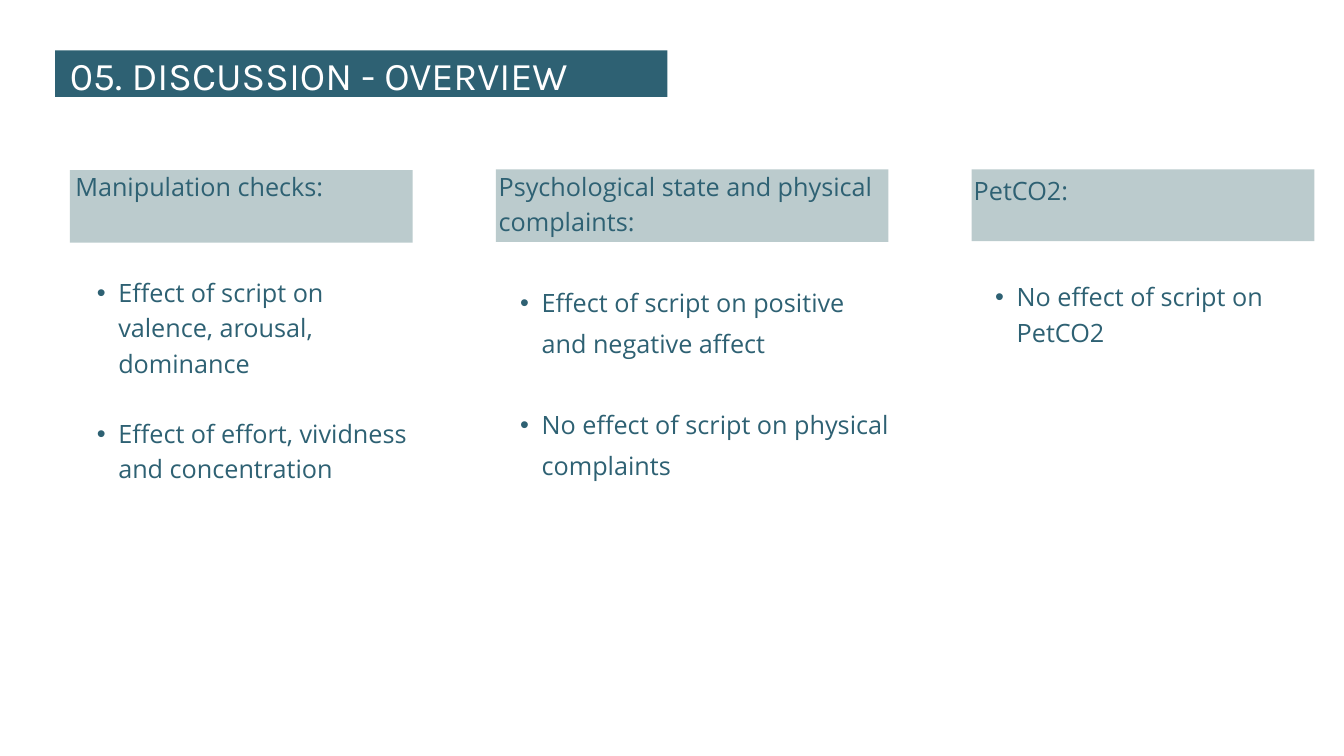
from lxml import etree
from pptx import Presentation
from pptx import util as u
from pptx.dml.color import RGBColor
from pptx.enum import shapes, text
from pptx.oxml.ns import qn

TEAL = RGBColor(0x2E, 0x61, 0x73)
MIST = RGBColor(0xBB, 0xCB, 0xCD)
WHITE = RGBColor(0xFF, 0xFF, 0xFF)


def add_text(p, content, font="Open Sans", size=27, color=TEAL,
             leading=37.8, before=0, bullet=False):
    """Write one formatted paragraph; leading and before are in points."""
    p.line_spacing = u.Pt(leading)
    p.space_before = u.Pt(before)
    r = p.add_run()
    r.text = content
    r.font.name = font
    r.font.size = u.Pt(size)
    r.font.color.rgb = color
    if bullet:
        p.level = 1
        pPr = p._p.get_or_add_pPr()
        pPr.set("marL", str(u.Inches(0.64)))
        pPr.set("indent", str(u.Inches(-0.32)))
        etree.SubElement(pPr, qn("a:buFont")).set("typeface", "Arial")
        etree.SubElement(pPr, qn("a:buChar")).set("char", "•")


class Deck:
    """Holds the style and the current slide."""

    def __init__(self, prs):
        self.s = prs.slides.add_slide(prs.slide_layouts[6])

    def band(self, left, top, width, height, color=MIST):
        sp = self.s.shapes.add_shape(
            shapes.MSO_SHAPE.RECTANGLE,
            *map(u.Inches, (left, top, width, height)))
        sp.shadow.inherit = False
        sp.fill.solid()
        sp.fill.fore_color.rgb = color
        sp.line.fill.background()

    def text_box(self, left, top, width, height):
        sp = self.s.shapes.add_textbox(
            *map(u.Inches, (left, top, width, height)))
        tf = sp.text_frame
        tf.word_wrap = True
        tf.auto_size = text.MSO_AUTO_SIZE.NONE
        tf.margin_left = tf.margin_top = tf.margin_right = tf.margin_bottom = 0
        return tf

    def title(self, content):
        self.band(0.82, 0.75, 9.11, 0.69, TEAL)
        tf = self.text_box(1.04, 0.82, 8.96, 0.65)
        add_text(tf.paragraphs[0], content, font="Karla", size=42,
                 color=WHITE, leading=46.2)

    def column(self, band, box, heading, points, leading, gaps):
        """A heading on a band with bullet points, each after its gap."""
        self.band(*band)
        tf = self.text_box(*box)
        add_text(tf.paragraphs[0], heading)
        for point, gap in zip(points, gaps):
            add_text(tf.add_paragraph(), point, leading=leading,
                     before=gap * leading, bullet=True)


def main():
    prs = Presentation()
    prs.slide_width, prs.slide_height = u.Inches(20), u.Inches(11.25)
    deck = Deck(prs)

    # Title bar
    deck.title("05. DISCUSSION - OVERVIEW")

    # Three columns of findings; gaps are counted in lines
    deck.column((1.04, 2.53, 5.1, 1.08), (1.12, 2.48, 5.02, 5.83),
                "Manipulation checks:",
                ["Effect of script on valence, arousal, dominance",
                 "Effect of effort, vividness and concentration"],
                leading=37.8, gaps=(2, 1))
    deck.column((7.38, 2.52, 5.84, 1.08), (7.42, 2.47, 5.84, 5.71),
                "Psychological state and physical complaints:",
                ["Effect of script on positive and negative affect",
                 "No effect of script on physical complaints"],
                leading=43.5, gaps=(1, 1))
    deck.column((14.46, 2.52, 5.1, 1.07), (14.49, 2.54, 5.5, 2.59),
                "PetCO2:",
                ["No effect of script on PetCO2"],
                leading=37.8, gaps=(2,))

    prs.save("out.pptx")


if __name__ == "__main__":
    main()
